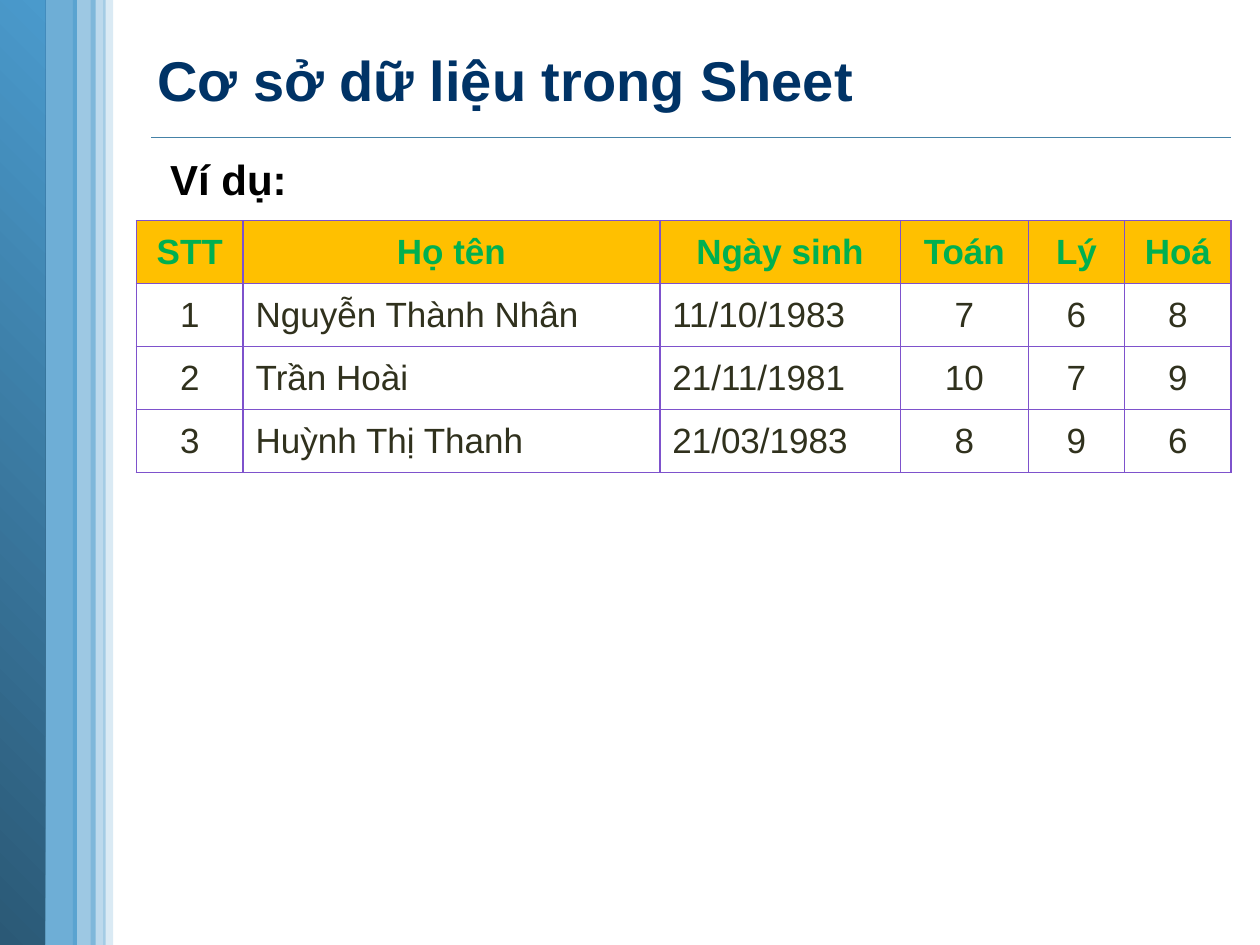
import pptx
import pptx.dml.color
import pptx.enum.dml
import pptx.enum.shapes
import pptx.enum.text
import pptx.oxml
import pptx.oxml.ns
import pptx.util
from pptx.dml.color import RGBColor
from pptx.util import Cm

SKY = RGBColor(0x4A, 0x9A, 0xCC)
DEEP_BLUE = RGBColor(0x2B, 0x59, 0x76)
RULE_BLUE = RGBColor(0x45, 0x82, 0xA7)
NAVY = RGBColor(0x00, 0x33, 0x66)
BLACK = RGBColor(0x00, 0x00, 0x00)
GREEN = RGBColor(0x00, 0xB0, 0x50)
AMBER = RGBColor(0xFF, 0xC0, 0x00)
OLIVE = RGBColor(0x30, 0x31, 0x1D)
PURPLE = RGBColor(0x7E, 0x52, 0xCC)

CENTER = pptx.enum.text.PP_ALIGN.CENTER
LEFT = pptx.enum.text.PP_ALIGN.LEFT
MIDDLE = pptx.enum.text.MSO_ANCHOR.MIDDLE

COLUMN_WIDTHS = (2.15, 8.4, 4.85, 2.58, 1.94, 2.15)
COLUMN_ALIGNMENTS = (CENTER, LEFT, LEFT, CENTER, CENTER, CENTER)
STUDENTS = (
    ("STT", "Họ tên", "Ngày sinh", "Toán", "Lý", "Hoá"),
    ("1", "Nguyễn Thành Nhân", "11/10/1983", "7", "6", "8"),
    ("2", "Trần Hoài", "21/11/1981", "10", "7", "9"),
    ("3", "Huỳnh Thị Thanh", "21/03/1983", "8", "9", "6"),
)


def format_text(text_frame, size, color, bold, alignment=LEFT):
    para = text_frame.paragraphs[0]
    para.alignment = alignment
    for span in para.runs:
        span.font.name = "Arial"
        span.font.size = pptx.util.Pt(size)
        span.font.bold = bold
        span.font.color.rgb = color


def add_strip(page, left, top, width, height):
    strip = page.shapes.add_shape(
        pptx.enum.shapes.MSO_SHAPE.RECTANGLE, left, top, width, height)
    strip.shadow.inherit = False
    strip.line.fill.background()
    return strip


def add_clear_strip(page, left, top, width, height, opacity):
    strip = add_strip(page, left, top, width, height)
    strip.fill.solid()
    strip.fill.fore_color.rgb = SKY
    color = strip.fill._xPr.find(".//" + pptx.oxml.ns.qn("a:srgbClr"))
    color.append(pptx.oxml.parse_xml(
        f'<a:alpha {pptx.oxml.ns.nsdecls("a")} val="{opacity * 1000}"/>'))


def add_gradient_strip(page, left, top, width, height):
    strip = add_strip(page, left, top, width, height)
    strip.fill.gradient()
    strip.fill.gradient_angle = 45
    for stop, color, position in zip(
            strip.fill.gradient_stops, (DEEP_BLUE, SKY), (0, 1)):
        stop.color.rgb = color
        stop.position = position


def add_side_band(page, left, top, height):
    add_clear_strip(page, left + Cm(0.76), top, Cm(0.79), height, 80)
    add_gradient_strip(page, left, top, Cm(0.91), height)
    for offset, width, opacity in (
            (2.08, 0.2, 20), (1.47, 0.46, 54), (1.83, 0.3, 37)):
        add_clear_strip(page, left + Cm(offset), top, Cm(width), height, opacity)


def add_heading(page, left, top, width, height):
    title = page.shapes.title
    title.left, title.top, title.width, title.height = left, top, width, height
    title.text_frame.text = "Cơ sở dữ liệu trong Sheet"
    title.text_frame.vertical_anchor = MIDDLE
    format_text(title.text_frame, 32, NAVY, True)

    rule_top = top + Cm(2.59)
    rule = page.shapes.add_connector(
        pptx.enum.shapes.MSO_CONNECTOR.STRAIGHT,
        left + Cm(0.13), rule_top, left + width - Cm(0.2), rule_top)
    rule.line.color.rgb = RULE_BLUE
    rule.line.width = pptx.util.Pt(1)
    rule._element.spPr.append(pptx.oxml.parse_xml(
        f'<a:effectLst {pptx.oxml.ns.nsdecls("a")}/>'))


def add_example_label(page, left, top, width, height):
    box = page.shapes.add_textbox(left, top, width, height)
    box.text_frame.word_wrap = True
    box.text_frame.text = "Ví dụ:"
    format_text(box.text_frame, 24, BLACK, True)


def add_cell_borders(cell):
    properties = cell._tc.get_or_add_tcPr()
    for index, side in enumerate(("lnL", "lnR", "lnT", "lnB")):
        properties.insert(index, pptx.oxml.parse_xml(
            f'<a:{side} {pptx.oxml.ns.nsdecls("a")} w="12700"><a:solidFill>'
            f'<a:srgbClr val="{PURPLE}"/></a:solidFill></a:{side}>'))


def add_student_table(page, left, top, width, height):
    table = page.shapes.add_table(
        len(STUDENTS), len(COLUMN_WIDTHS), left, top, width, height).table
    table.horz_banding = False
    for column, share in zip(table.columns, COLUMN_WIDTHS):
        column.width = int(width * share / sum(COLUMN_WIDTHS))
    for row_index, student in enumerate(STUDENTS):
        is_header = row_index == 0
        for column_index, value in enumerate(student):
            cell = table.cell(row_index, column_index)
            cell.text_frame.text = value
            cell.vertical_anchor = MIDDLE
            if is_header:
                cell.fill.solid()
                cell.fill.fore_color.rgb = AMBER
            else:
                cell.fill.background()
            format_text(
                cell.text_frame, 20, GREEN if is_header else OLIVE, is_header,
                CENTER if is_header else COLUMN_ALIGNMENTS[column_index])
            add_cell_borders(cell)


def main():
    deck = pptx.Presentation()
    deck.slide_width, deck.slide_height = Cm(25.4), Cm(19.05)
    page = deck.slides.add_slide(deck.slide_layouts[5])
    add_side_band(page, Cm(0), Cm(0), deck.slide_height)
    add_heading(page, Cm(2.92), Cm(0.18), Cm(22.1), Cm(2.82))
    add_student_table(page, Cm(2.75), Cm(4.45), Cm(22.07), Cm(5.08))
    add_example_label(page, Cm(3.18), Cm(2.97), Cm(4.65), Cm(1.27))
    deck.save("out.pptx")


if __name__ == "__main__":
    main()
